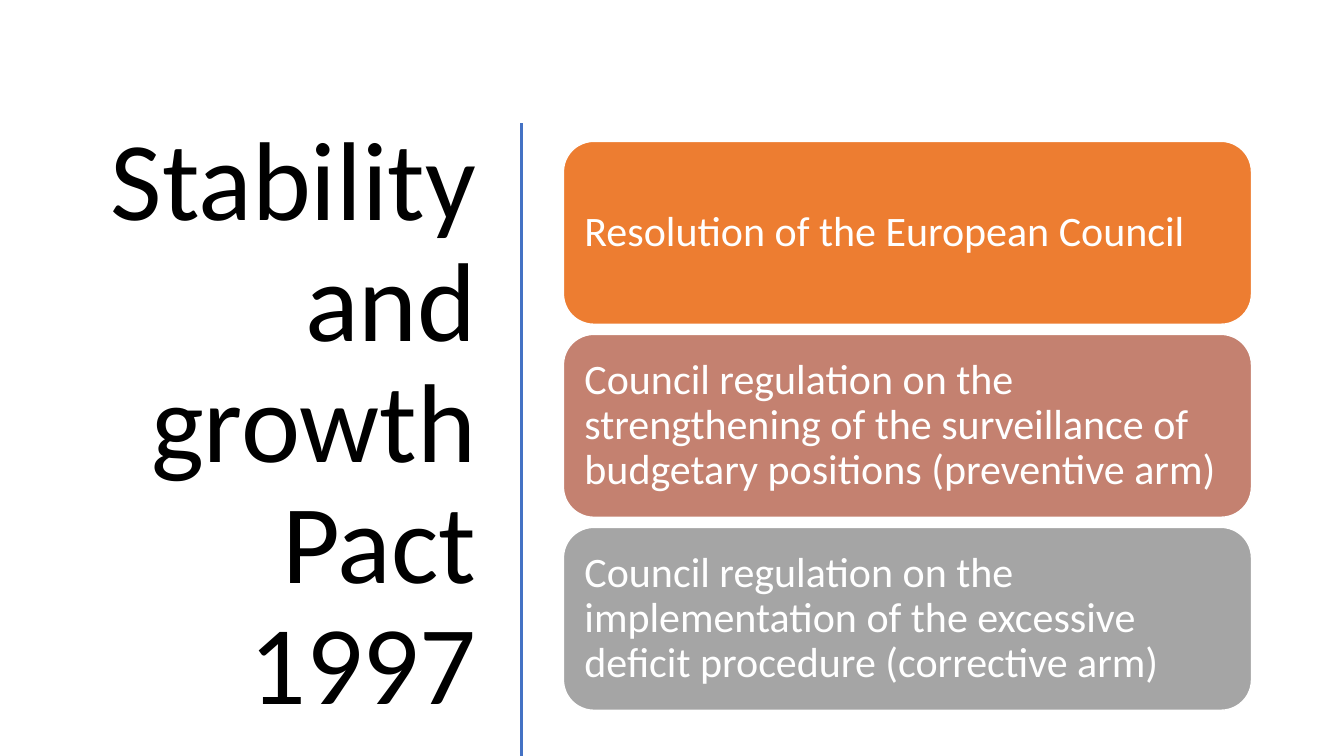
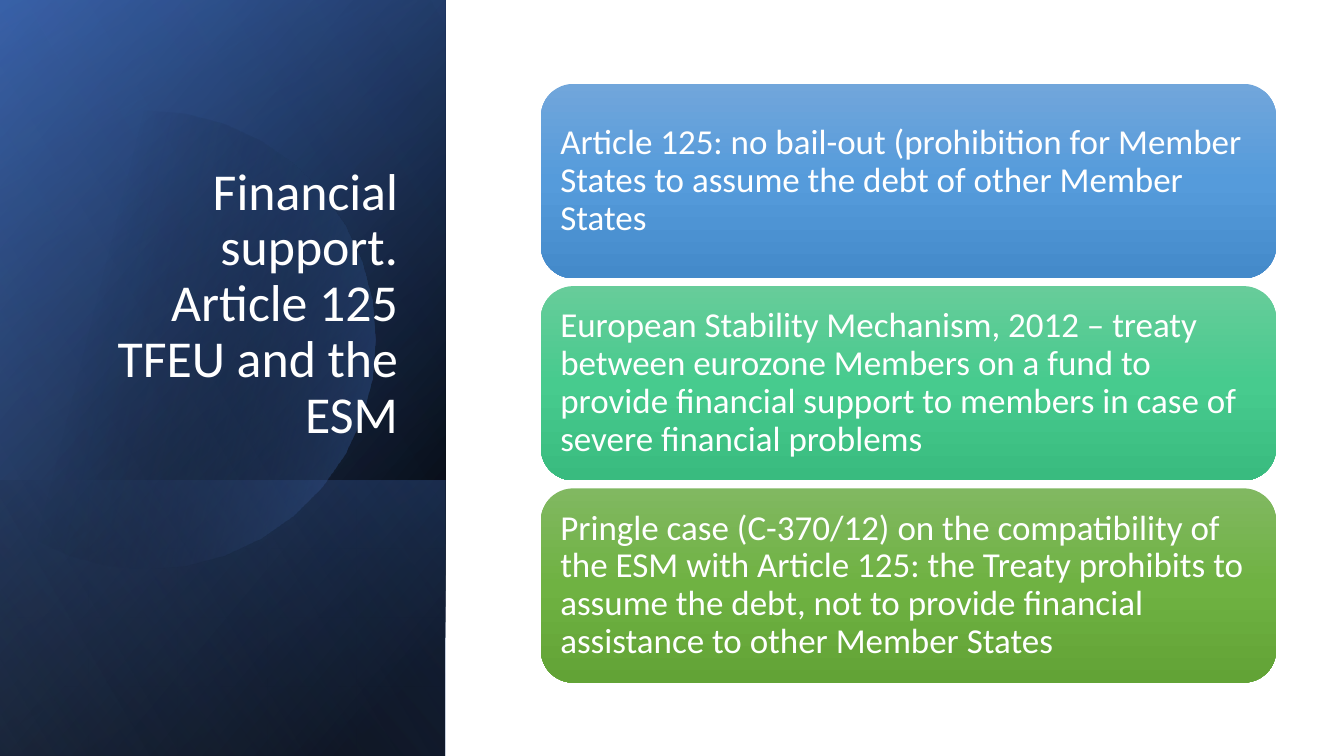
"""Build two slides on the Stability and growth Pact and on financial support."""
from dataclasses import dataclass
from math import cos, radians, sin

from lxml.etree import SubElement
from pptx import Presentation
from pptx.dml.color import RGBColor as RGB
from pptx.enum.shapes import MSO_CONNECTOR as LINK, MSO_SHAPE as SHAPE
from pptx.enum.text import MSO_ANCHOR as ANCHOR, PP_ALIGN as ALIGN
from pptx.oxml.ns import qn
from pptx.util import Inches, Pt


@dataclass(frozen=True)
class Theme:
    font: str = "Calibri"
    black: str = "000000"
    white: str = "FFFFFF"
    blue: str = "4472C4"
    navy: str = "2F5597"
    pale: str = "8FAADC"
    orange: str = "ED7D31"
    rose: str = "C48170"
    grey: str = "A5A5A5"
    sky: tuple = ("71A6DB", "559BDB", "448ACA")
    mint: tuple = ("67CC9A", "47CB8E", "39BB7F")
    leaf: tuple = ("81B861", "6FB242", "62A336")
    huge: int = 80
    head: int = 37
    large: int = 30
    body: int = 25


def paint(shape, stops, angle):
    """Fill a shape with (place, colour, opacity) stops, angle clockwise."""
    shape.shadow.inherit = False
    shape.line.fill.background()
    shape.fill.gradient()
    shape.fill.gradient_angle = 360 - angle
    ramp = shape._element.spPr.find(qn("a:gradFill")).find(qn("a:gsLst"))
    for old in list(ramp):
        ramp.remove(old)
    for place, color, alpha in stops:
        stop = SubElement(ramp, qn("a:gs"), pos=str(place * 1000))
        tint = SubElement(stop, qn("a:srgbClr"), val=color)
        if alpha < 100:
            SubElement(tint, qn("a:alpha"), val=str(alpha * 1000))


def write(shape, text, size, color, align, anchor):
    """Set one paragraph of text in a shape."""
    frame = shape.text_frame
    frame.word_wrap = True
    frame.vertical_anchor = anchor
    para = frame.paragraphs[0]
    para.alignment = align
    para.line_spacing = 0.9
    run = para.add_run()
    run.text = text
    run.font.name = theme.font
    run.font.size = Pt(size)
    run.font.color.rgb = RGB.from_string(color)


theme = Theme()
deck = Presentation()
deck.slide_width, deck.slide_height = Inches(13.33), Inches(7.5)
COL, ROW = deck.slide_width / 100, deck.slide_height / 100
pact, funds = [deck.slides.add_slide(deck.slide_layouts[6]) for _ in range(2)]

rule = pact.shapes.add_connector(
    LINK.STRAIGHT, *map(int, (38.8 * COL, 16.3 * ROW, 38.8 * COL, 100 * ROW)))
rule.line.color.rgb = RGB.from_string(theme.blue)
rule.line.width = Pt(2)
SubElement(rule._element.spPr, qn("a:effectLst"))

WIDE = 33.15
panes = [
    (0, [(8, theme.black, 100), (100, theme.navy, 100)], 220),
    (0, [(0, theme.black, 0), (99, theme.blue, 46)], 240),
    (63.5, [(2, theme.blue, 29), (100, theme.black, 30)], 140),
    (None, [(29, theme.black, 0), (100, theme.blue, 43)], 14),
    (0, [(0, theme.black, 0), (99, theme.pale, 11)], 150),
]
for top, stops, angle in panes:
    if top is None:
        mid, level, reach = Inches(1.45), Inches(3.37), Inches(2.27)
        arc = [(max(0, int(mid + reach * cos(radians(turn)))),
                int(level + reach * sin(radians(turn))))
               for turn in range(-130, 131, 10)]
        path = funds.shapes.build_freeform(*arc[0])
        path.add_line_segments(arc[1:], close=True)
        pane = path.convert_to_shape()
    else:
        pane = funds.shapes.add_shape(
            SHAPE.RECTANGLE, 0, int(top * ROW), int(WIDE * COL),
            int((100 - top) * ROW))
    paint(pane, stops, angle)

pages = [
    (pact, "Stability and growth Pact 1997", (3.9, 15.6, 32.3, 81.5),
     theme.huge, theme.black, ANCHOR.MIDDLE,
     (41.92, 18.7, 51.2, 24.2, 25.53), theme.large, [
         (theme.orange, "Resolution of the European Council"),
         (theme.rose, "Council regulation on the strengthening of the "
          "surveillance of budgetary positions (preventive arm)"),
         (theme.grey, "Council regulation on the implementation of the "
          "excessive deficit procedure (corrective arm)"),
     ]),
    (funds, "Financial support. Article 125 TFEU and the ESM",
     (4.75, 24.5, 25.6, 35), theme.head, theme.white, ANCHOR.BOTTOM,
     (40.25, 11.1, 54.7, 25.7, 26.75), theme.body, [
         (theme.sky, "Article 125: no bail-out (prohibition for Member States "
          "to assume the debt of other Member States"),
         (theme.mint, "European Stability Mechanism, 2012 – treaty between "
          "eurozone Members on a fund to provide financial support to members "
          "in case of severe financial problems"),
         (theme.leaf, "Pringle case (C-370/12) on the compatibility of the ESM "
          "with Article 125: the Treaty prohibits to assume the debt, not to "
          "provide financial assistance to other Member States"),
     ]),
]
for slide, title, spot, size, color, anchor, grid, small, cards in pages:
    left, top, width, height = spot
    head = slide.shapes.add_textbox(
        int(left * COL), int(top * ROW), int(width * COL), int(height * ROW))
    write(head, title, size, color, ALIGN.RIGHT, anchor)

    left, top, width, height, step = grid
    for row, (fill, text) in enumerate(cards):
        card = slide.shapes.add_shape(
            SHAPE.ROUNDED_RECTANGLE, int(left * COL),
            int((top + row * step) * ROW), int(width * COL), int(height * ROW))
        if isinstance(fill, tuple):
            paint(card, [(50 * k, tint, 100) for k, tint in enumerate(fill)], 90)
        else:
            card.shadow.inherit = False
            card.fill.solid()
            card.fill.fore_color.rgb = RGB.from_string(fill)
            card.line.color.rgb = RGB.from_string(theme.white)
            card.line.width = Pt(1)
        frame = card.text_frame
        frame.margin_left = frame.margin_right = Pt(small / 4 + 1)
        frame.margin_left = frame.margin_right = Inches(small / 250)
        write(card, text, small, theme.white, ALIGN.LEFT, ANCHOR.MIDDLE)

deck.save("out.pptx")
